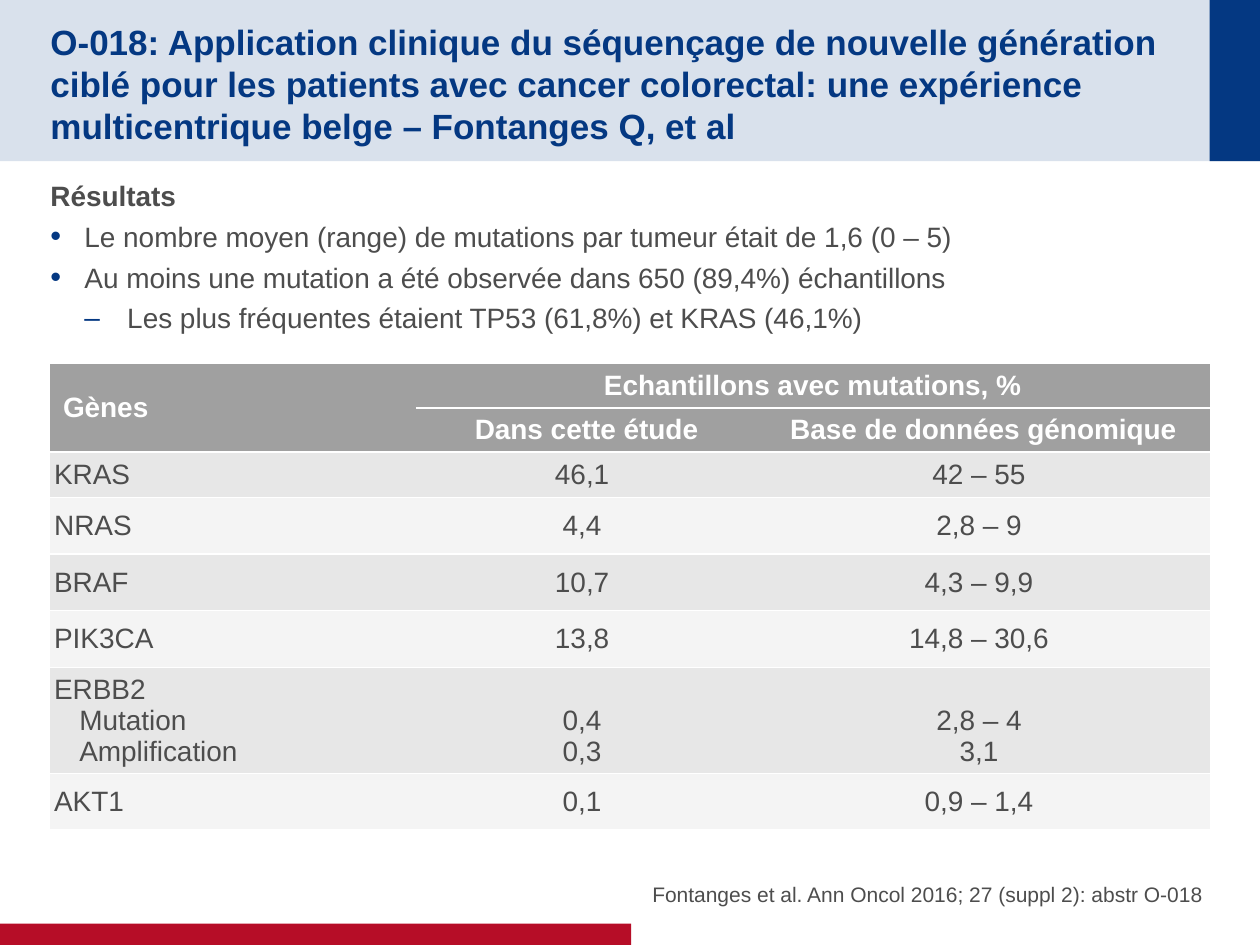
import pptx
import pptx.util
import pptx.dml.color
import pptx.enum.text
import pptx.enum.shapes
import lxml.etree

Inches = pptx.util.Inches
Pt = pptx.util.Pt
RGBColor = pptx.dml.color.RGBColor
Align = pptx.enum.text.PP_ALIGN
Anchor = pptx.enum.text.MSO_ANCHOR

NAVY = RGBColor(0x04, 0x38, 0x82)
PALE = RGBColor(0xD9, 0xE1, 0xEC)
RED = RGBColor(0xB6, 0x0D, 0x27)
TEXT = RGBColor(0x4D, 0x4D, 0x4D)
WHITE = RGBColor(0xFF, 0xFF, 0xFF)
HEAD = RGBColor(0xA0, 0xA0, 0xA0)
DARK = RGBColor(0xE7, 0xE7, 0xE7)
LIGHT = RGBColor(0xF4, 0xF4, 0xF4)
NS = "http://schemas.openxmlformats.org/drawingml/2006/main"


def style(para, size, color, bold=False, align=Align.LEFT):
    para.font.name = "Arial"
    para.font.size = Pt(size)
    para.font.color.rgb = color
    para.font.bold = bold
    para.alignment = align


def place(shape, left, top, width, height, anchor, insets):
    shape.left, shape.top = Inches(left), Inches(top)
    shape.width, shape.height = Inches(width), Inches(height)
    frame = shape.text_frame
    frame.word_wrap = True
    frame.auto_size = pptx.enum.text.MSO_AUTO_SIZE.NONE
    frame.vertical_anchor = anchor
    frame.margin_left, frame.margin_top, frame.margin_right, frame.margin_bottom = map(Inches, insets)
    return frame


deck = pptx.Presentation()
deck.slide_width, deck.slide_height = Inches(10), Inches(7.5)
slide = deck.slides.add_slide(deck.slide_layouts[1])
shapes = slide.shapes

bands = [(0, 0, 10, 1.28, PALE), (9.6, 0, 0.4, 1.28, NAVY), (0, 7.33, 5.01, 0.17, RED)]
for spot, (left, top, width, height, color) in enumerate(bands):
    band = shapes.add_shape(pptx.enum.shapes.MSO_SHAPE.RECTANGLE,
                            Inches(left), Inches(top), Inches(width), Inches(height))
    band.shadow.inherit = False
    band.fill.solid()
    band.fill.fore_color.rgb = color
    band.line.fill.background()
    shapes._spTree.insert(2 + spot, band._element)

title = place(shapes.title, 0.4, 0.2, 9.01, 0.88, Anchor.MIDDLE, (0, 0.05, 0, 0))
title.text = ("O-018: Application clinique du séquençage de nouvelle génération ciblé "
              "pour les patients avec cancer colorectal: une expérience "
              "multicentrique belge – Fontanges Q, et al")
style(title.paragraphs[0], 20, NAVY, True)
title.paragraphs[0].line_spacing = Pt(24)

points = [
    ("Résultats", 0, 0, 0, None),
    ("Le nombre moyen (range) de mutations par tumeur était de 1,6 (0 – 5)", 0, 0.27, -0.27, "•"),
    ("Au moins une mutation a été observée dans 650 (89,4%) échantillons", 0, 0.27, -0.27, "•"),
    ("Les plus fréquentes étaient TP53 (61,8%) et KRAS (46,1%)", 1, 0.61, -0.34, "–"),
]
body = place(slide.placeholders[1], 0.4, 1.37, 9.2, 5.19, Anchor.TOP, (0, 0.05, 0, 0.05))
body.text = "\n".join(point[0] for point in points)
for para, (words, level, margin, indent, mark) in zip(body.paragraphs, points):
    para.level = level
    para.space_before, para.space_after = Pt(0), Pt(4)
    para.line_spacing = Pt(19.2)
    style(para, 16, TEXT, mark is None)
    props = para._p.get_or_add_pPr()
    props.set("marL", str(Inches(margin)))
    props.set("indent", str(Inches(indent)))
    if mark:
        bullet = (f'<a:buClr><a:srgbClr val="{NAVY}"/></a:buClr>'
                  f'<a:buSzPct val="{110000 if mark == "•" else 100000}"/>'
                  f'<a:buFont typeface="Arial"/><a:buChar char="{mark}"/>')
    else:
        bullet = "<a:buNone/>"
    spot = props.index(props.find(f"{{{NS}}}defRPr"))
    for node in reversed(lxml.etree.fromstring(f'<a:x xmlns:a="{NS}">{bullet}</a:x>')):
        props.insert(spot, node)

rows = [
    ("Gènes", "Echantillons avec mutations, %", ""),
    ("", "Dans cette étude", "Base de données génomique"),
    ("KRAS", "46,1", "42 – 55"),
    ("NRAS", "4,4", "2,8 – 9"),
    ("BRAF", "10,7", "4,3 – 9,9"),
    ("PIK3CA", "13,8", "14,8 – 30,6"),
    ("ERBB2\nMutation\nAmplification", "0,4\n0,3", "2,8 – 4\n3,1"),
    ("AKT1", "0,1", "0,9 – 1,4"),
]
heights = [0.34, 0.35, 0.36, 0.45, 0.45, 0.45, 0.84, 0.45]
widths = [2.9, 2.71, 3.59]
frame = shapes.add_table(len(rows), len(widths), Inches(0.4), Inches(2.89),
                         Inches(sum(widths)), Inches(sum(heights)))
table = frame.table
table.first_row = table.horz_banding = False
table._tbl.tblPr.find(f"{{{NS}}}tableStyleId").text = "{2D5ABB26-0587-4C30-8999-92F81FD0307C}"
for column, width in zip(table.columns, widths):
    column.width = Inches(width)
for line, height in zip(table.rows, heights):
    line.height = Inches(height)
table.cell(0, 0).merge(table.cell(1, 0))
table.cell(0, 1).merge(table.cell(0, 2))

for r, row in enumerate(rows):
    head = r < 2
    for c, words in enumerate(row):
        cell = table.cell(r, c)
        cell.fill.solid()
        cell.fill.fore_color.rgb = HEAD if head else (LIGHT if r % 2 else DARK)
        cell.vertical_anchor = Anchor.BOTTOM if "\n" in words else Anchor.MIDDLE
        if not head:
            cell.margin_left = Inches(0.03)
        edge = (f'<a:lnB xmlns:a="{NS}" w="12700"><a:solidFill>'
                f'<a:srgbClr val="{WHITE}"/></a:solidFill></a:lnB>')
        cell._tc.get_or_add_tcPr().insert(0, lxml.etree.fromstring(edge))
        if not words:
            continue
        cell.text = words
        for n, para in enumerate(cell.text_frame.paragraphs):
            style(para, 16, WHITE if head else TEXT, head, Align.CENTER if c else Align.LEFT)
            if n and c == 0:
                para._p.get_or_add_pPr().set("indent", str(Inches(0.2)))

box = shapes.add_textbox(0, 0, 0, 0)
source = place(box, 5.08, 6.67, 4.52, 0.53, Anchor.BOTTOM, (0, 0, 0.05, 0))
source.text = "Fontanges et al. Ann Oncol 2016; 27 (suppl 2): abstr O-018"
style(source.paragraphs[0], 12, TEXT, align=Align.RIGHT)
source.paragraphs[0].space_after = Pt(4)

deck.save("out.pptx")
